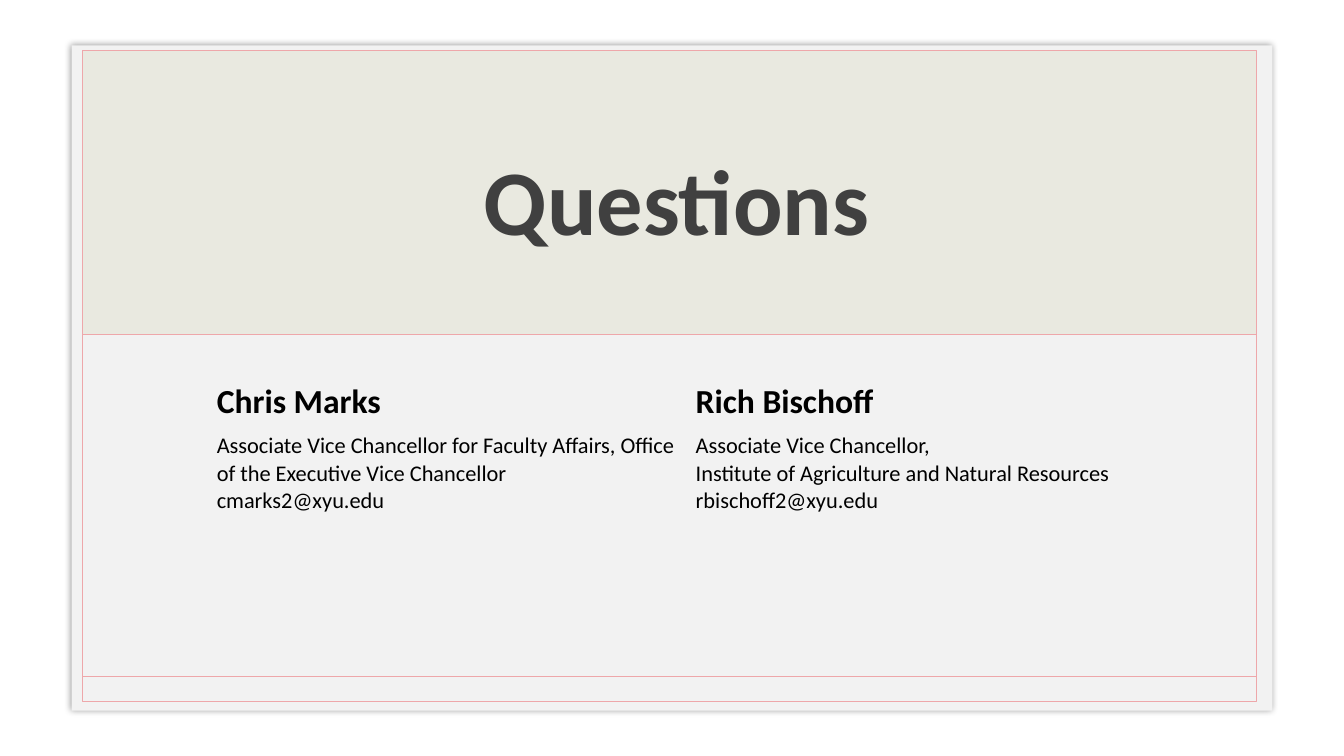
from lxml import etree
from pptx import Presentation, util as u
from pptx.dml.color import RGBColor
from pptx.enum import shapes, text
from pptx.oxml import ns

TITLE = "Questions"
CONTACTS = [
    ("Chris Marks", ["Associate Vice Chancellor for Faculty Affairs, "
                     "Office of the Executive Vice Chancellor",
                     "cmarks2@xyu.edu"]),
    ("Rich Bischoff", ["Associate Vice Chancellor,",
                       "Institute of Agriculture and Natural Resources",
                       "rbischoff2@xyu.edu"]),
]
COLORS = {"card": "F2F2F2", "rule": "EEA7AA", "band": "E9E9E0",
          "title": "404040", "body": "000000"}
FONT = "Calibri"

WIDTH, HEIGHT = 13.33, 7.5
FRAME_LEFT, FRAME_WIDTH = 0.82, 11.64
FRAME_RIGHT = FRAME_LEFT + FRAME_WIDTH
FOOTER_Y = 6.71
COLUMN_WIDTH = 4.75
ROW_HEIGHTS = [0.49, 0.91]


def color(name):
    return RGBColor.from_string(COLORS[name])


def panel(slide, box, fill=None, line=None, weight=1):
    rect = slide.shapes.add_shape(shapes.MSO_SHAPE.RECTANGLE, *map(u.Inches, box))
    rect.shadow.inherit = False
    if fill:
        rect.fill.solid()
        rect.fill.fore_color.rgb = color(fill)
    else:
        rect.fill.background()
    if line:
        rect.line.color.rgb = color(line)
        rect.line.width = u.Pt(weight)
    else:
        rect.line.fill.background()
    return rect


def add_glow_shadow(shape, blur, opacity):
    """Give the shape an even black shadow on all sides."""
    effects = shape._element.spPr.find(ns.qn("a:effectLst"))
    shadow = etree.SubElement(effects, ns.qn("a:outerShdw"), blurRad=str(u.Pt(blur)),
                              dist="0", dir="0", algn="ctr", rotWithShape="0")
    black = etree.SubElement(shadow, ns.qn("a:srgbClr"), val="000000")
    etree.SubElement(black, ns.qn("a:alpha"), val=str(opacity * 1000))


def write(frame, lines, size, ink="body", bold=False, align=text.PP_ALIGN.LEFT):
    frame.word_wrap = True
    for i, line in enumerate(lines):
        paragraph = frame.paragraphs[0] if i == 0 else frame.add_paragraph()
        paragraph.alignment = align
        run = paragraph.add_run()
        run.text = line
        run.font.name, run.font.size, run.font.bold = FONT, u.Pt(size), bold
        run.font.color.rgb = color(ink)


def clear_cell(cell):
    """Remove the table style's borders and fill."""
    properties = cell._tc.get_or_add_tcPr()
    for side in ("lnL", "lnR", "lnT", "lnB"):
        border = etree.SubElement(properties, ns.qn(f"a:{side}"), w="0")
        etree.SubElement(border, ns.qn("a:noFill"))
    cell.fill.background()


def add_background(slide):
    card = panel(slide, (0.71, 0.45, 11.91, 6.6), fill="card")
    add_glow_shadow(card, blur=5, opacity=40)
    panel(slide, (FRAME_LEFT, 0.52, FRAME_WIDTH, 6.44), line="rule")
    footer = slide.shapes.add_connector(
        shapes.MSO_CONNECTOR.STRAIGHT,
        *map(u.Inches, (FRAME_LEFT, FOOTER_Y, FRAME_RIGHT, FOOTER_Y)))
    footer.line.color.rgb = color("rule")
    footer.line.width = u.Pt(1)
    etree.SubElement(footer._element.spPr, ns.qn("a:effectLst"))
    panel(slide, (FRAME_LEFT, 0.5, FRAME_WIDTH, 2.82), fill="band", line="rule", weight=0.25)


def add_title(slide):
    title = slide.shapes.add_textbox(*map(u.Inches, (2.42, 1.5, 8.58, 1.07)))
    title.text_frame.vertical_anchor = text.MSO_ANCHOR.BOTTOM
    write(title.text_frame, [TITLE], 66, ink="title", bold=True, align=text.PP_ALIGN.CENTER)


def add_contacts(slide):
    box = (2.05, 3.74, COLUMN_WIDTH * len(CONTACTS), sum(ROW_HEIGHTS))
    table = slide.shapes.add_table(len(ROW_HEIGHTS), len(CONTACTS), *map(u.Inches, box)).table
    table.first_row = table.horz_banding = False
    for row, height in zip(table.rows, ROW_HEIGHTS):
        row.height = u.Inches(height)
    for i, (name, details) in enumerate(CONTACTS):
        table.columns[i].width = u.Inches(COLUMN_WIDTH)
        write(table.cell(0, i).text_frame, [name], 24, bold=True)
        write(table.cell(1, i).text_frame, details, 16)
    for cell in table.iter_cells():
        clear_cell(cell)


def main():
    deck = Presentation()
    deck.slide_width, deck.slide_height = u.Inches(WIDTH), u.Inches(HEIGHT)
    slide = deck.slides.add_slide(deck.slide_layouts[6])
    add_background(slide)
    add_title(slide)
    add_contacts(slide)
    deck.save("out.pptx")


if __name__ == "__main__":
    main()
